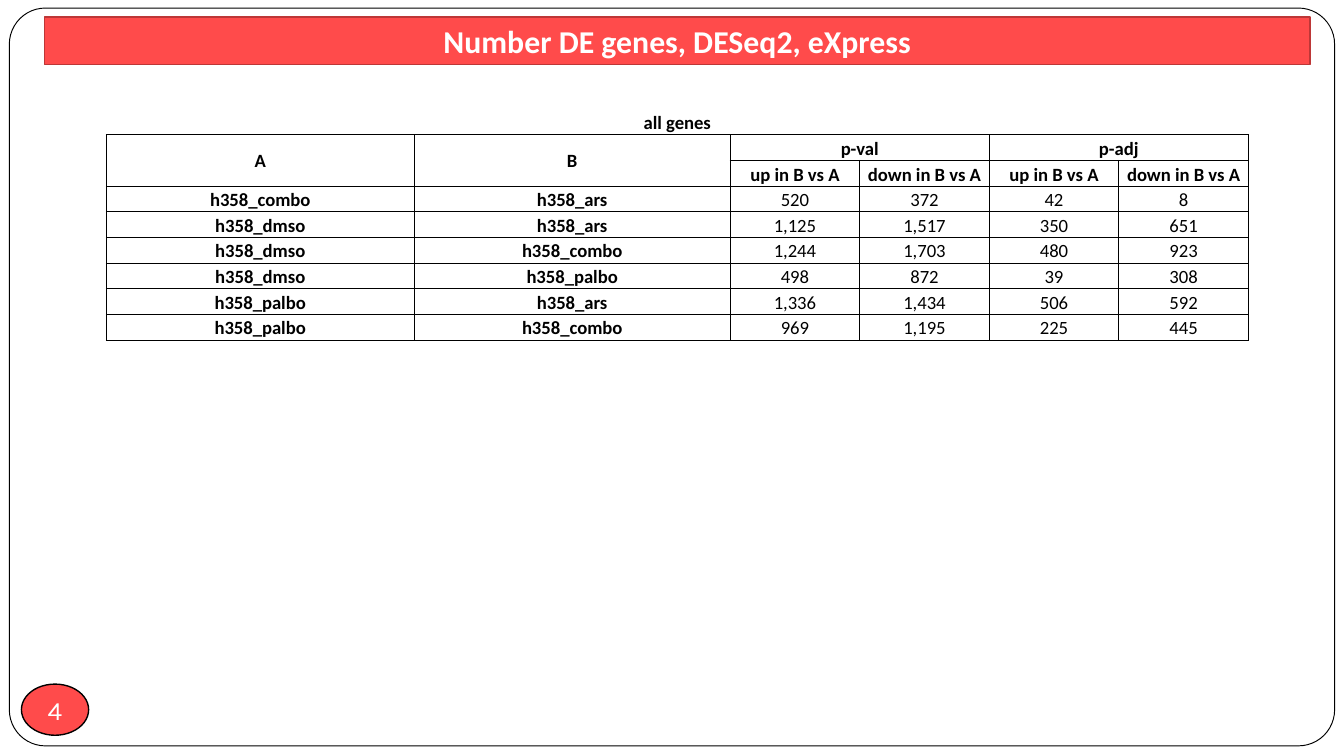
from lxml.etree import SubElement
from pptx import Presentation
from pptx.dml.color import RGBColor
from pptx.enum.shapes import MSO_SHAPE
from pptx.enum.text import MSO_ANCHOR, MSO_AUTO_SIZE, PP_ALIGN
from pptx.oxml.ns import qn
from pptx.util import Pt

RED, DARK_RED, BLACK, WHITE = "FF4B4B", "BD3737", "000000", "FFFFFF"
NO_STYLE = "{2D5ABB26-0587-4C30-8999-92F81FD0307C}"
COLUMN_WIDTHS = [165, 169.3] + [69.4] * 4
ROW_HEIGHT = 13.75
ROWS = [
    ["all genes", "", "", "", "", ""],
    ["A", "B", "p-val", "", "p-adj", ""],
    ["", ""] + ["up in B vs A", "down in B vs A"] * 2,
    ["h358_combo", "h358_ars", "520", "372", "42", "8"],
    ["h358_dmso", "h358_ars", "1,125", "1,517", "350", "651"],
    ["h358_dmso", "h358_combo", "1,244", "1,703", "480", "923"],
    ["h358_dmso", "h358_palbo", "498", "872", "39", "308"],
    ["h358_palbo", "h358_ars", "1,336", "1,434", "506", "592"],
    ["h358_palbo", "h358_combo", "969", "1,195", "225", "445"],
]
HEADER_ROWS = 3
LABEL_COLUMNS = 2
MERGES = [((0, 0), (0, 5)), ((1, 0), (2, 0)), ((1, 1), (2, 1)),
          ((1, 2), (1, 3)), ((1, 4), (1, 5))]


def color(hex_string):
    return RGBColor.from_string(hex_string)


def paint(shape, fill, line, width):
    shape.fill.solid()
    shape.fill.fore_color.rgb = color(fill)
    shape.line.color.rgb = color(line)
    shape.line.width = Pt(width)


def write(text_frame, text, size, font_name, font_color, bold=False):
    text_frame.text = text
    paragraph = text_frame.paragraphs[0]
    paragraph.alignment = PP_ALIGN.CENTER
    font = paragraph.font
    font.size, font.name, font.bold = Pt(size), font_name, bold
    font.color.rgb = color(font_color)


def add_frame(slide, left, top, width, height):
    frame = slide.shapes.add_shape(
        MSO_SHAPE.ROUNDED_RECTANGLE, Pt(left), Pt(top), Pt(width), Pt(height))
    frame.shadow.inherit = False
    frame.adjustments[0] = 0.049
    paint(frame, WHITE, BLACK, 0.5)
    slide.shapes._spTree.insert(2, frame._element)


def add_page_number(slide, left, top, width, height, number):
    badge = slide.shapes.add_shape(
        MSO_SHAPE.OVAL, Pt(left), Pt(top), Pt(width), Pt(height))
    badge.shadow.inherit = False
    paint(badge, RED, BLACK, 0.75)
    text_frame = badge.text_frame
    text_frame.margin_left = text_frame.margin_right = 0
    text_frame.margin_top = text_frame.margin_bottom = 0
    text_frame.word_wrap = False
    text_frame.vertical_anchor = MSO_ANCHOR.MIDDLE
    write(text_frame, number, 14, "Karla", WHITE)


def set_title(slide, left, top, width, height, text):
    title = slide.shapes.title
    title.left, title.top = Pt(left), Pt(top)
    title.width, title.height = Pt(width), Pt(height)
    geometry = SubElement(title._element.spPr, qn("a:prstGeom"), prst="roundRect")
    SubElement(geometry, qn("a:avLst"))
    paint(title, RED, DARK_RED, 1)
    title.text_frame.auto_size = MSO_AUTO_SIZE.NONE
    title.text_frame.vertical_anchor = MSO_ANCHOR.MIDDLE
    write(title.text_frame, text, 17, "Calibri", WHITE, True)


def add_borders(cell, sides):
    properties = cell._tc.get_or_add_tcPr()
    for side in sides:
        line = SubElement(properties, qn(f"a:ln{side}"), w=str(Pt(0.5)))
        fill = SubElement(line, qn("a:solidFill"))
        SubElement(fill, qn("a:srgbClr"), val=BLACK)


def add_gene_table(slide, left, top):
    graphic_frame = slide.shapes.add_table(
        len(ROWS), len(COLUMN_WIDTHS), Pt(left), Pt(top),
        Pt(sum(COLUMN_WIDTHS)), Pt(ROW_HEIGHT * len(ROWS)))
    table = graphic_frame.table
    table.first_row = table.horz_banding = False
    table._tbl.tblPr.find(qn("a:tableStyleId")).text = NO_STYLE
    for column, width in zip(table.columns, COLUMN_WIDTHS):
        column.width = Pt(width)
    for row_index, values in enumerate(ROWS):
        table.rows[row_index].height = Pt(ROW_HEIGHT)
        for column_index, value in enumerate(values):
            cell = table.cell(row_index, column_index)
            add_borders(cell, "LRTB" if row_index else "B")
            cell.fill.background()
            cell.margin_left = cell.margin_right = cell.margin_top = Pt(0.5)
            cell.margin_bottom = 0
            cell.vertical_anchor = MSO_ANCHOR.BOTTOM
            bold = row_index < HEADER_ROWS or column_index < LABEL_COLUMNS
            write(cell.text_frame, value, 10, "Calibri", BLACK, bold)
    for first, last in MERGES:
        table.cell(*first).merge(table.cell(*last))
    for column_index in range(LABEL_COLUMNS):
        table.cell(1, column_index).vertical_anchor = MSO_ANCHOR.MIDDLE


def main():
    presentation = Presentation()
    presentation.slide_width, presentation.slide_height = Pt(720), Pt(405)
    slide = presentation.slides.add_slide(presentation.slide_layouts[5])
    add_frame(slide, 5, 4.3, 710, 395.3)
    add_page_number(slide, 11.5, 366.5, 36, 27.4, "4")
    set_title(slide, 23.8, 9.2, 678.2, 25.4, "Number DE genes, DESeq2, eXpress")
    add_gene_table(slide, 56.9, 58.4)
    presentation.save("out.pptx")


if __name__ == "__main__":
    main()
